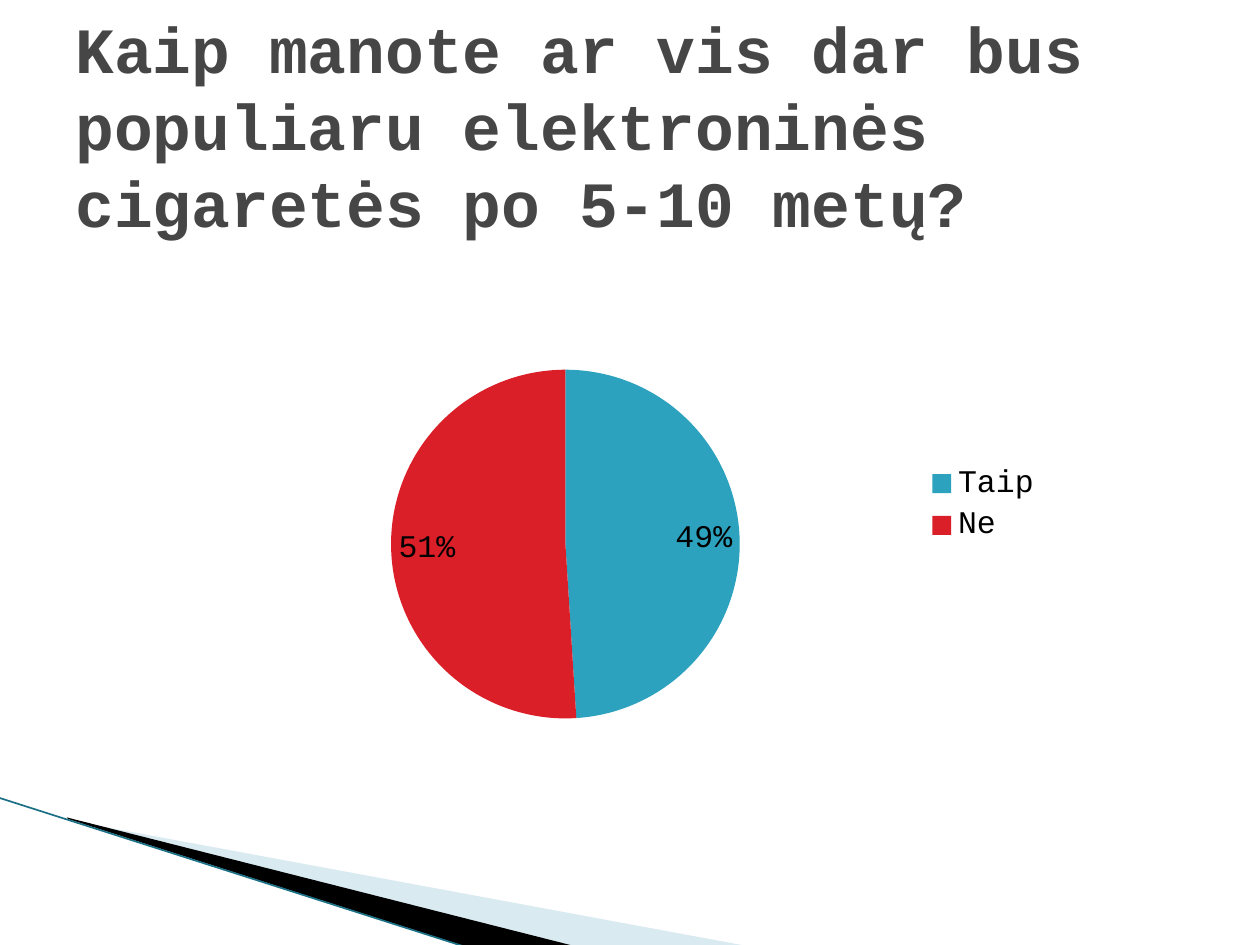
from lxml import etree
from pptx import Presentation
from pptx.chart.data import CategoryChartData
from pptx.dml.color import RGBColor
from pptx.enum.chart import XL_CHART_TYPE as ChartType
from pptx.enum.chart import XL_LABEL_POSITION as LabelPosition
from pptx.enum.chart import XL_LEGEND_POSITION as LegendPosition
from pptx.enum.shapes import MSO_CONNECTOR as Connector
from pptx.enum.text import MSO_ANCHOR as Anchor
from pptx.oxml import parse_xml
from pptx.oxml.ns import nsdecls, qn
from pptx.util import Cm, Pt

COLORS = {
    "title": "464646",
    "text": "000000",
    "yes": "2DA2BF",
    "no": "DA1F28",
    "pale": "A0CBDC",
    "black": "000000",
    "edge": "1B7085",
}


class SlideBuilder:
    font = "Courier New"

    def __init__(self, deck):
        self.page = deck.slides.add_slide(deck.slide_layouts[6])

    def color(self, name):
        return RGBColor.from_string(COLORS[name])

    def wedge(self, points, fill, opacity=100):
        corners = [(Cm(x), Cm(y)) for x, y in points]
        builder = self.page.shapes.build_freeform(*corners[0])
        builder.add_line_segments(corners[1:], close=True)
        shape = builder.convert_to_shape()
        shape.shadow.inherit = False
        shape.line.fill.background()
        shape.fill.solid()
        shape.fill.fore_color.rgb = self.color(fill)
        if opacity < 100:
            tint = shape.fill._xPr.find(".//" + qn("a:srgbClr"))
            etree.SubElement(tint, qn("a:alpha"), val=str(opacity * 1000))

    def line(self, start, end, color, width):
        ends = [Cm(value) for value in (*start, *end)]
        line = self.page.shapes.add_connector(Connector.STRAIGHT, *ends)
        line.line.color.rgb = self.color(color)
        line.line.width = Pt(width)
        etree.SubElement(line._element.spPr, qn("a:effectLst"))

    def pie(self, left, top, width, height, values, colors, plot_area):
        data = CategoryChartData()
        data.categories = list(values)
        data.add_series("Series 1", list(values.values()))
        frame = self.page.shapes.add_chart(
            ChartType.PIE, Cm(left), Cm(top), Cm(width), Cm(height), data)
        chart = frame.chart
        chart.has_title = False
        chart.font.name = self.font
        chart.font.size = Pt(18)
        chart.font.color.rgb = self.color("text")
        chart.has_legend = True
        chart.legend.position = LegendPosition.RIGHT
        chart.legend.include_in_layout = False

        plot = chart.plots[0]
        plot.vary_by_categories = True
        plot.has_data_labels = True
        labels = plot.data_labels
        labels.show_value = False
        labels.show_percentage = True
        labels.number_format = "0%"
        labels.number_format_is_linked = False
        labels.position = LabelPosition.INSIDE_END
        for index, name in enumerate(colors):
            point = plot.series[0].points[index]
            point.format.fill.solid()
            point.format.fill.fore_color.rgb = self.color(name)
            point.format.line.fill.background()
        self.place_plot(chart, plot_area)

    def place_plot(self, chart, plot_area):
        area = chart._chartSpace.find(".//" + qn("c:plotArea"))
        for old in area.findall(qn("c:layout")):
            area.remove(old)
        modes = '<c:layoutTarget val="inner"/><c:xMode val="edge"/><c:yMode val="edge"/>'
        sizes = "".join(f'<c:{key} val="{value}"/>' for key, value in plot_area.items())
        area.insert(0, parse_xml(
            f'<c:layout {nsdecls("c")}><c:manualLayout>{modes}{sizes}'
            "</c:manualLayout></c:layout>"))

    def title(self, text, left, top, width, height):
        box = self.page.shapes.add_textbox(Cm(left), Cm(top), Cm(width), Cm(height))
        frame = box.text_frame
        frame.word_wrap = True
        frame.vertical_anchor = Anchor.MIDDLE
        frame.margin_top = Cm(0.45)
        frame.text = text
        para = frame.paragraphs[0]
        para.line_spacing = Pt(44)
        span = para.runs[0]
        span.font.name = self.font
        span.font.size = Pt(36.9)
        span.font.bold = True
        span.font.color.rgb = self.color("title")


def main():
    deck = Presentation()
    deck.slide_width, deck.slide_height = Cm(25.4), Cm(19.05)
    slide = SlideBuilder(deck)
    slide.wedge([(1.4, 16.54), (15.11, 19.08), (11.58, 19.08), (1.4, 16.51)], "pale", 40)
    slide.wedge([(1.35, 16.48), (11.61, 19.08), (9.45, 19.1), (1.37, 16.51)], "black")
    slide.line((-0.03, 16.08), (9.42, 19.1), "edge", 0.95)
    slide.pie(4.11, 5.46, 17.15, 9.42, {"Taip": 49, "Ne": 51}, ["yes", "no"],
              {"x": 0.22, "y": 0.21, "w": 0.41, "h": 0.75})
    slide.title("Kaip manote ar vis dar bus populiaru elektroninės cigaretės po 5-10 metų?",
                1.27, 0.76, 22.86, 3.18)
    deck.save("out.pptx")


if __name__ == "__main__":
    main()
